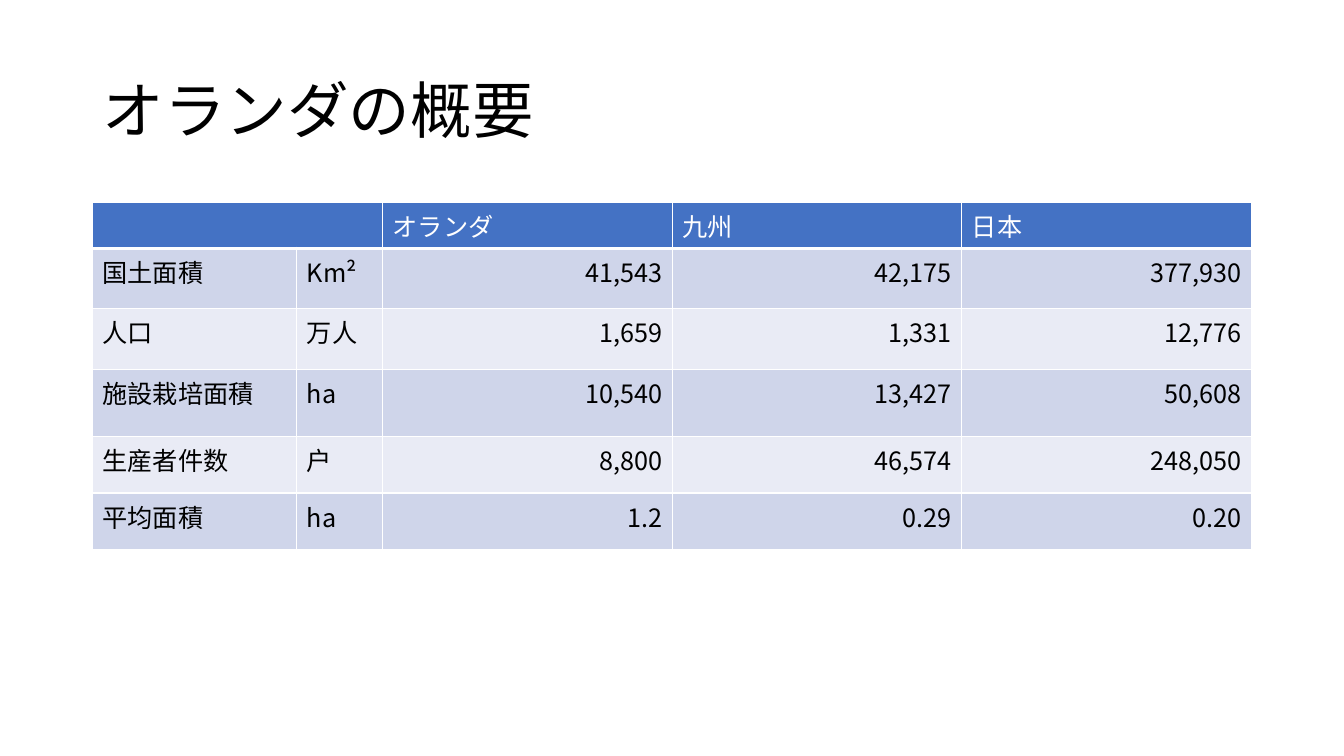
import pptx
import pptx.dml.color
import pptx.enum.text
import pptx.oxml.ns
import pptx.util
import lxml.etree

Cm = pptx.util.Cm
Pt = pptx.util.Pt
ALIGN = pptx.enum.text.PP_ALIGN

COLORS = {
    "text": "000000",
    "header": "4472C4",
    "on_header": "FFFFFF",
    "border": "FFFFFF",
    "odd_row": "CFD5EA",
    "even_row": "E9EBF5",
}


def rgb(name):
    return pptx.dml.color.RGBColor.from_string(COLORS[name])


def add_xml(parent, tag, **attributes):
    return lxml.etree.SubElement(parent, pptx.oxml.ns.qn(tag), attributes)


class SlideBuilder:
    font = "Noto Sans CJK JP"
    title_size = 44
    table_size = 18

    def __init__(self, slide):
        self.slide = slide

    def add_run(self, p, text, size, color):
        r = p.add_run()
        r.text = text
        r.font.size = Pt(size)
        r.font.bold = False
        r.font.color.rgb = rgb(color)
        r.font.name = self.font
        add_xml(r.font._element, "a:ea", typeface=self.font)

    def title(self, text, left, top, width, height):
        sp = self.slide.shapes.title
        sp.left, sp.top, sp.width, sp.height = left, top, width, height
        tf = sp.text_frame
        tf.word_wrap = True
        tf.vertical_anchor = pptx.enum.text.MSO_ANCHOR.MIDDLE
        p = tf.paragraphs[0]
        p.alignment = ALIGN.LEFT
        p.line_spacing = 0.9
        self.add_run(p, text, self.title_size, "text")

    def borders(self, cell, bottom):
        tc_pr = cell._tc.get_or_add_tcPr()
        for side, width in (("L", 1), ("R", 1), ("T", 1), ("B", bottom)):
            line = add_xml(tc_pr, f"a:ln{side}", w=str(Pt(width)))
            fill = add_xml(line, "a:solidFill")
            add_xml(fill, "a:srgbClr", val=COLORS["border"])

    def cell(self, cell, text, fill, color, align, bottom):
        self.borders(cell, bottom)
        cell.fill.solid()
        cell.fill.fore_color.rgb = rgb(fill)
        p = cell.text_frame.paragraphs[0]
        p.alignment = align
        if text:
            self.add_run(p, text, self.table_size, color)

    def table(self, rows, left, top, widths, heights):
        frame = self.slide.shapes.add_table(
            len(rows), len(widths), left, top, sum(widths), sum(heights))
        table = frame.table
        for column, width in zip(table.columns, widths):
            column.width = width
        for row, height in zip(table.rows, heights):
            row.height = height
        for i, values in enumerate(rows):
            for j, text in enumerate(values):
                if i == 0:
                    style = ("header", "on_header", ALIGN.LEFT, 3)
                else:
                    fill = "odd_row" if i % 2 else "even_row"
                    align = ALIGN.RIGHT if j >= 2 else ALIGN.LEFT
                    style = (fill, "text", align, 1)
                self.cell(table.cell(i, j), text, *style)
        # The header spans the item and unit columns
        table.cell(0, 0).merge(table.cell(0, 1))


# Presentation
prs = pptx.Presentation()
prs.slide_width = Cm(33.87)
prs.slide_height = Cm(19.05)
builder = SlideBuilder(prs.slides.add_slide(prs.slide_layouts[5]))

# Title
builder.title("オランダの概要", Cm(2.33), Cm(1.01), Cm(29.21), Cm(3.68))

# Comparison of land, population and greenhouse growing
overview = [
    ("", "", "オランダ", "九州", "日本"),
    ("国土面積", "Km²", "41,543", "42,175", "377,930"),
    ("人口", "万人", "1,659", "1,331", "12,776"),
    ("施設栽培面積", "ha", "10,540", "13,427", "50,608"),
    ("生産者件数", "戸", "8,800", "46,574", "248,050"),
    ("平均面積", "ha", "1.2", "0.29", "0.20"),
]
builder.table(
    overview, Cm(2.33), Cm(5.09),
    widths=[Cm(5.15), Cm(2.16)] + [Cm(7.3)] * 3,
    heights=[Cm(h) for h in (1.03, 1.5, 1.55, 1.68, 1.43, 1.43)],
)

prs.save("out.pptx")
